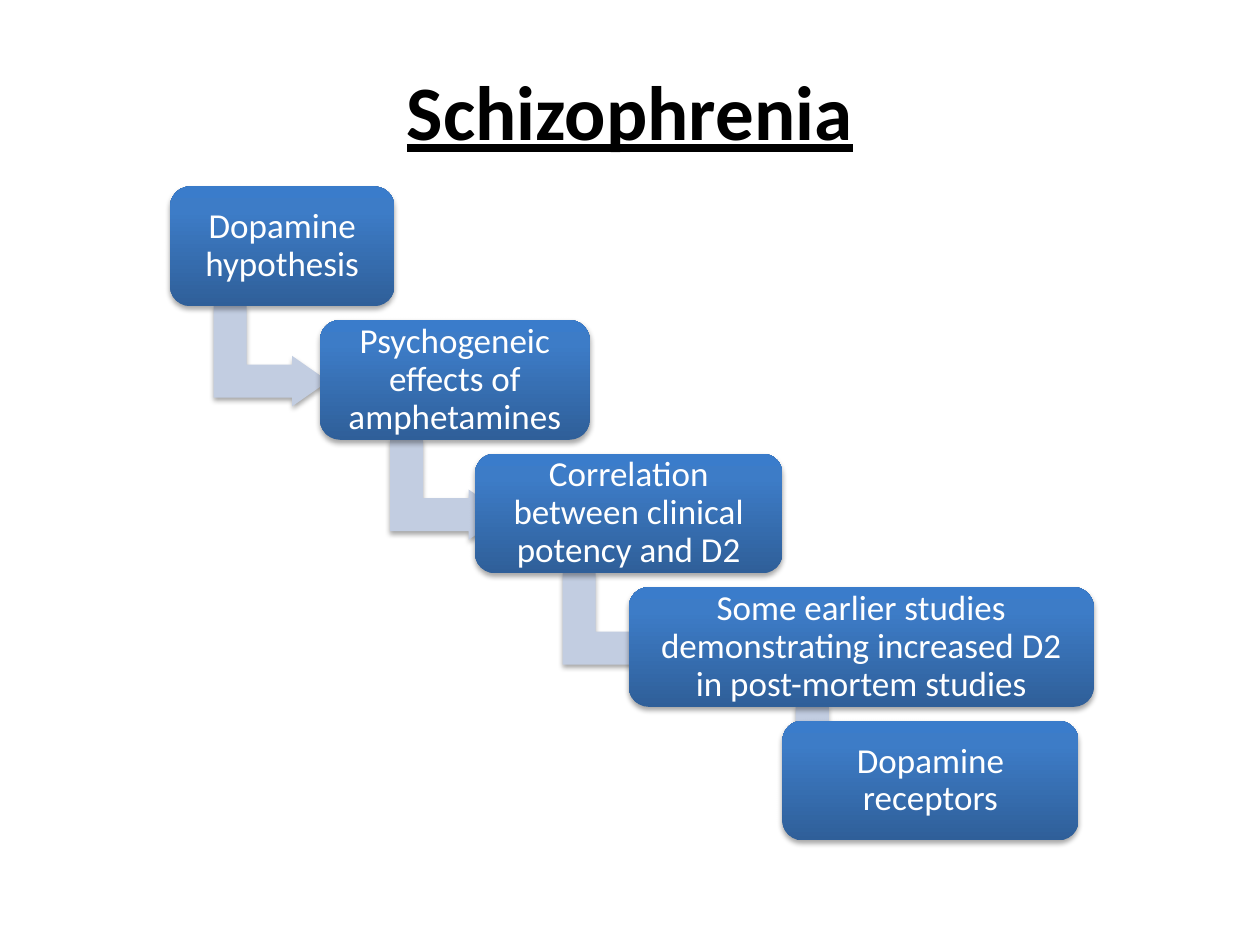
from copy import deepcopy

from lxml import etree
from pptx import Presentation
from pptx.dml.color import RGBColor
from pptx.enum.shapes import MSO_SHAPE as Shape
from pptx.enum.text import MSO_ANCHOR as Anchor, PP_ALIGN as Align
from pptx.oxml.ns import qn
from pptx.util import Inches, Pt

BLACK = RGBColor(0x00, 0x00, 0x00)
WHITE = RGBColor(0xFF, 0xFF, 0xFF)
ARROW_BLUE = RGBColor(0xC2, 0xCD, 0xE1)
STEP_GRADIENT = [
    (0, RGBColor(0x2F, 0x5F, 0x99)),
    (0.8, RGBColor(0x3D, 0x7C, 0xC7)),
    (1, RGBColor(0x3A, 0x7C, 0xCB)),
]

# Staircase geometry, in inches
FIRST_TOP, STEP_DOWN, STEP_HEIGHT = 1.48, 1.06, 0.95
ARROW_DROP, ARROW_WIDTH, ARROW_HEIGHT = 0.89, 0.8, 0.91

# Text, left and width of each step, and left of the arrow leaving it
STEPS = [
    ("Dopamine hypothesis", 1.35, 1.78, 1.75),
    ("Psychogeneic effects of amphetamines", 2.54, 2.14, 3.15),
    ("Correlation between clinical potency and D2", 3.77, 2.44, 4.52),
    ("Some earlier studies demonstrating increased D2 in post-mortem studies",
     4.99, 3.69, 6.37),
    ("Dopamine receptors", 6.21, 2.35, None),
]


class SlideBuilder:
    """Holds the style and the current slide."""

    title_font = {"name": "Calibri", "size": Pt(44), "bold": True, "underline": True}
    step_font = {"name": "Calibri", "size": Pt(20)}

    def __init__(self, page):
        self.page = page

    def set_text(self, frame, text, font, color):
        frame.word_wrap = True
        frame.vertical_anchor = Anchor.MIDDLE
        para = frame.paragraphs[0]
        para.alignment = Align.CENTER
        span = para.add_run()
        span.text = text
        for name, value in font.items():
            setattr(span.font, name, value)
        span.font.color.rgb = color
        return para

    def title(self, text, left, top, width, height):
        box = self.page.shapes.title
        box.left, box.top = Inches(left), Inches(top)
        box.width, box.height = Inches(width), Inches(height)
        self.set_text(box.text_frame, text, self.title_font, BLACK)

    def shape(self, kind, left, top, width, height, adjustments):
        shape = self.page.shapes.add_shape(
            kind, Inches(left), Inches(top), Inches(width), Inches(height))
        for index, value in enumerate(adjustments):
            shape.adjustments[index] = value
        shape.line.fill.background()
        return shape

    def soft_shadow(self, shape):
        shape.shadow.inherit = False
        effects = shape._element.spPr.find(qn("a:effectLst"))
        shadow = etree.SubElement(
            effects, qn("a:outerShdw"), blurRad=str(Pt(3.1)), dist=str(Pt(1.8)),
            dir="5400000", rotWithShape="0")
        color = etree.SubElement(shadow, qn("a:srgbClr"), val=str(BLACK))
        etree.SubElement(color, qn("a:alpha"), val="35000")

    def arrow(self, left, top):
        shape = self.shape(Shape.BENT_UP_ARROW, left, top, ARROW_WIDTH,
                           ARROW_HEIGHT, (0.328, 0.25, 0.358))
        shape.rotation = 90
        shape.fill.solid()
        shape.fill.fore_color.rgb = ARROW_BLUE
        self.soft_shadow(shape)

    def step(self, text, left, top, width):
        shape = self.shape(Shape.ROUNDED_RECTANGLE, left, top, width,
                           STEP_HEIGHT, (0.167,))
        # The default gradient has two stops; a third is added
        shape.fill.gradient()
        shape.fill.gradient_angle = 90
        stop_list = shape._element.spPr.find(qn("a:gradFill")).find(qn("a:gsLst"))
        stop_list.append(deepcopy(stop_list[-1]))
        for stop, (position, color) in zip(shape.fill.gradient_stops, STEP_GRADIENT):
            stop.position = position
            stop.color.rgb = color
        self.soft_shadow(shape)

        frame = shape.text_frame
        for side in ("left", "top", "right", "bottom"):
            setattr(frame, f"margin_{side}", Inches(0.12))
        para = self.set_text(frame, text, self.step_font, WHITE)
        para.line_spacing = 0.9


def main():
    deck = Presentation()
    deck.slide_width, deck.slide_height = Inches(10), Inches(7.5)
    builder = SlideBuilder(deck.slides.add_slide(deck.slide_layouts[5]))

    # Title
    builder.title("Schizophrenia", 0.5, 0.3, 9, 1.14)

    # Staircase: each arrow lies behind the steps it joins
    for index, (text, left, width, arrow_left) in enumerate(STEPS):
        top = FIRST_TOP + index * STEP_DOWN
        if arrow_left is not None:
            builder.arrow(arrow_left, top + ARROW_DROP)
        builder.step(text, left, top, width)

    deck.save("out.pptx")


if __name__ == "__main__":
    main()
